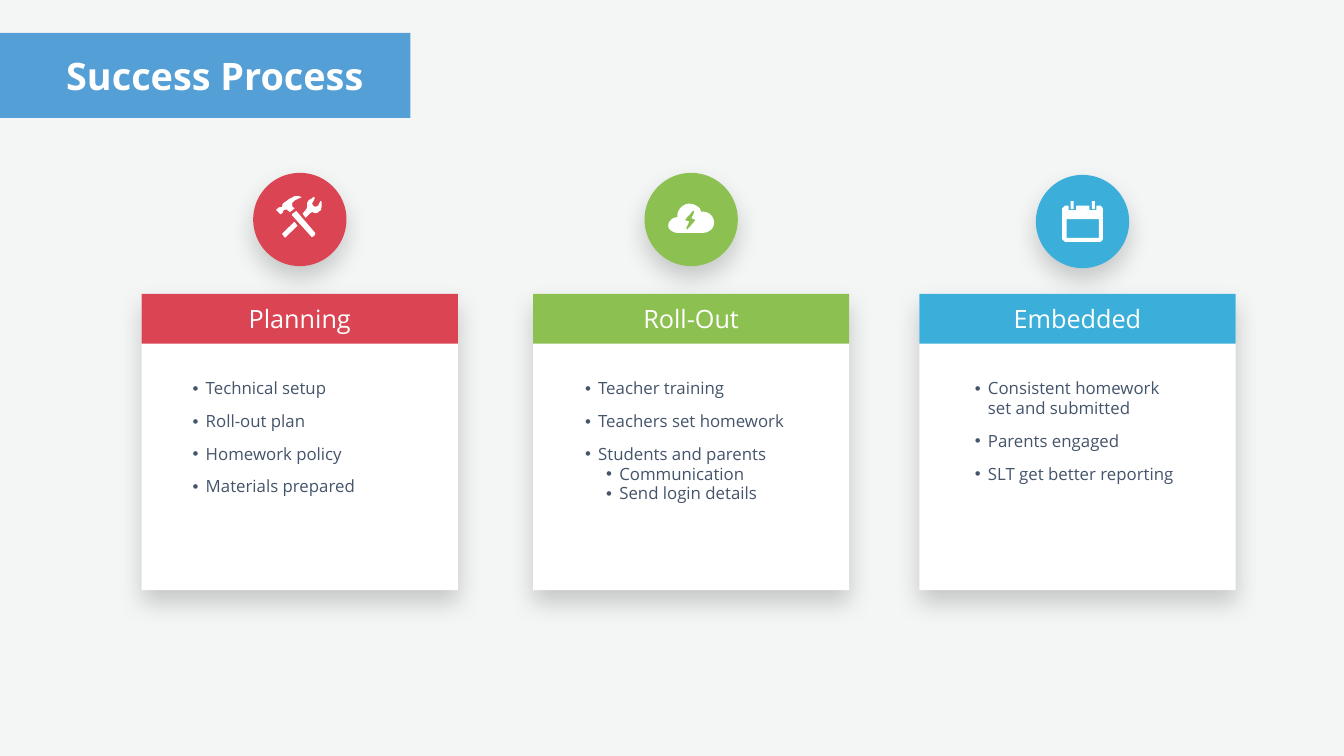
from lxml import etree
from pptx import Presentation, util as u
from pptx.dml.color import RGBColor
from pptx.enum import shapes, text
from pptx.oxml import ns

PX = 9144  # EMU per px, 100 px to the inch
FONT = "Open Sans"
WHITE, INK = "FFFFFF", "44546A"


def paint(fill, colour):
    fill.solid()
    fill.fore_color.rgb = RGBColor.from_string(colour)


def child(parent, tag, **attributes):
    return etree.SubElement(parent, ns.qn(tag), attributes)


# Icon outlines, relative to the corner of their circle.
# Two numbers are a line to a point, six are a Bezier curve.
HAMMER_AND_WRENCH = [
    [(61, 74), (64, 71, 67, 73, 72, 77), (74, 79, 74, 77, 74, 77),
     (75, 77, 80, 71, 82, 71), (82, 69), (80, 69, 78, 68, 78, 66),
     (70, 55, 101, 48, 96, 48), (93, 46, 83, 46, 82, 46),
     (77, 48, 69, 53, 66, 56), (61, 60, 59, 61, 59, 61),
     (57, 63, 59, 66, 56, 68), (53, 69, 51, 68, 49, 69),
     (49, 71, 48, 71, 46, 73), (46, 74), (53, 81),
     (53, 82, 54, 82, 56, 82), (56, 81, 57, 79, 59, 79),
     (59, 79, 59, 74, 61, 74)],
    [(86, 76), (85, 76), (78, 81), (77, 82, 77, 82, 77, 84), (115, 126),
     (115, 128, 117, 128, 119, 126), (123, 123), (123, 121, 123, 119, 123, 119)],
    [(136, 58), (135, 55, 135, 56, 133, 56), (133, 58, 130, 61, 130, 63),
     (128, 66, 125, 69, 120, 66), (115, 61, 117, 60, 119, 58),
     (119, 56, 122, 52, 122, 50), (123, 50, 122, 48, 120, 48),
     (119, 50, 109, 53, 107, 60), (106, 64, 109, 69, 104, 74), (98, 81),
     (104, 89), (112, 81), (114, 79, 117, 77, 120, 79),
     (128, 81, 131, 77, 135, 73), (136, 68, 136, 60, 136, 58)],
    [(59, 119), (57, 121, 57, 123, 59, 123), (62, 128),
     (64, 128, 66, 128, 66, 126), (88, 105), (82, 97)],
]
CLOUD = [
    [(117, 77), (112, 77), (109, 67, 101, 61, 89, 61), (77, 61, 65, 72, 65, 85),
     (65, 88), (64, 88), (56, 88, 47, 95, 47, 105), (47, 113, 56, 119, 64, 119),
     (117, 119), (128, 119, 138, 111, 138, 98), (138, 87, 128, 77, 117, 77)],
    [(99, 96), (96, 100, 88, 109, 86, 111), (86, 111, 85, 113, 83, 111),
     (83, 108), (88, 98), (88, 96, 86, 96, 85, 96), (83, 95, 81, 95, 81, 93),
     (81, 92, 81, 92, 83, 90), (85, 87, 94, 77, 94, 77),
     (96, 75, 96, 75, 98, 75), (98, 77, 99, 77, 99, 77),
     (99, 78, 98, 78, 98, 80), (93, 90), (94, 90, 96, 92, 98, 92),
     (99, 92, 101, 93, 101, 95)],
]
CALENDAR = [
    [(125, 61), (120, 61), (120, 70), (106, 70), (106, 61), (80, 61), (80, 70),
     (65, 70), (65, 61), (61, 61), (56, 61, 52, 65, 52, 70), (52, 125),
     (52, 129, 56, 133, 61, 133), (125, 133), (130, 133, 133, 129, 133, 125),
     (133, 70), (133, 65, 130, 61, 125, 61)],
    [(125, 125), (61, 125), (61, 88), (125, 88)],
    [(75, 52), (69, 52), (69, 68), (75, 68)],
    [(117, 52), (111, 52), (111, 68), (117, 68)],
]

# Heading, colour, card left, circle left and top, icon, list left and width, items
CARDS = [
    ("Planning", "DA4453", 281, 502, 343, HAMMER_AND_WRENCH, 370, 450,
     [("Technical setup", 0), ("Roll-out plan", 0), ("Homework policy", 0),
      ("Materials prepared", 0)]),
    ("Roll-Out", "8CC152", 1057, 1278, 343, CLOUD, 1148, 469,
     [("Teacher training", 0), ("Teachers set homework", 0),
      ("Students and parents", 0), ("Communication", 1), ("Send login details", 1)]),
    ("Embedded", "3BAFDA", 1823, 2054, 347, CALENDAR, 1921, 431,
     [("Consistent homework set and submitted", 0), ("Parents engaged", 0),
      ("SLT get better reporting", 0)]),
]
RECTANGLE, OVAL = shapes.MSO_SHAPE.RECTANGLE, shapes.MSO_SHAPE.OVAL

presentation = Presentation()
presentation.slide_width, presentation.slide_height = 2665 * PX, 1500 * PX
slide = presentation.slides.add_slide(presentation.slide_layouts[6])
paint(slide.background.fill, "F4F6F6")

# Plain blocks: title banner, then body, header and circle of each card
blocks = [(RECTANGLE, 0, 65, 814, 169, "0C79C8", False)]
for heading, colour, left, circle_left, circle_top, *rest in CARDS:
    blocks += [(OVAL, circle_left, circle_top, 185, 185, colour, True),
               (RECTANGLE, left, 583, 627, 588, WHITE, True),
               (RECTANGLE, left, 583, 627, 99, colour, False)]
for kind, left, top, width, height, colour, shadowed in blocks:
    shape = slide.shapes.add_shape(kind, left * PX, top * PX, width * PX, height * PX)
    paint(shape.fill, colour)
    shape.line.fill.background()
    shape.shadow.inherit = False
    if shadowed:
        effects = shape._element.spPr.find(ns.qn("a:effectLst"))
        shadow = child(effects, "a:outerShdw", blurRad=str(u.Pt(35)),
                       dist=str(u.Pt(16.8)), dir="5400000", algn="t", rotWithShape="0")
        child(child(shadow, "a:srgbClr", val="000000"), "a:alpha", val="19000")
    elif top == 65:
        tint = shape._element.spPr.find(".//" + ns.qn("a:srgbClr"))
        child(tint, "a:alpha", val="69000")

# White icons, all contours of one icon in a single outline
for heading, colour, left, circle_left, circle_top, icon, *rest in CARDS:
    builder = None
    for contour in icon:
        points = []
        for step in contour:
            if len(step) == 2:
                points.append(step)
                continue
            (x0, y0), (x1, y1, x2, y2, x3, y3) = points[-1], step
            for t in (0.2, 0.4, 0.6, 0.8, 1):
                a, b, c, d = (1 - t) ** 3, 3 * t * (1 - t) ** 2, 3 * t * t * (1 - t), t ** 3
                points.append((a * x0 + b * x1 + c * x2 + d * x3,
                               a * y0 + b * y1 + c * y2 + d * y3))
        points = [(circle_left + x, circle_top + y) for x, y in points]
        if builder is None:
            builder = slide.shapes.build_freeform(*points[0], scale=PX)
        else:
            builder.move_to(*points[0])
        builder.add_line_segments(points[1:], close=True)
    shape = builder.convert_to_shape()
    paint(shape.fill, WHITE)
    shape.line.fill.background()
    shape.shadow.inherit = False

# Text: title, then heading and bullet list of each card
texts = [(19, 93, 814, 113, 5, 54, True, WHITE, [("Success Process", None)])]
for heading, colour, left, circle_left, circle_top, icon, list_left, width, items in CARDS:
    texts += [(left, 602, 627, 68, 0, 36, False, WHITE, [(heading, None)]),
              (list_left, 740, width, 372, 12, 24, False, INK, items)]
for left, top, width, height, inset, size, bold, colour, items in texts:
    box = slide.shapes.add_textbox(left * PX, top * PX, width * PX, height * PX)
    frame = box.text_frame
    anchor = text.MSO_ANCHOR.MIDDLE if bold else text.MSO_ANCHOR.TOP
    frame_format = dict(word_wrap=True, vertical_anchor=anchor,
                        margin_left=inset * PX, margin_right=inset * PX,
                        margin_top=inset * PX, margin_bottom=inset * PX)
    for name, value in frame_format.items():
        setattr(frame, name, value)
    for index, (words, level) in enumerate(items):
        paragraph = frame.add_paragraph() if index else frame.paragraphs[0]
        run = paragraph.add_run()
        run.text = words
        for name, value in dict(name=FONT, size=u.Pt(size), bold=bold).items():
            setattr(run.font, name, value)
        run.font.color.rgb = RGBColor.from_string(colour)
        if level is None:
            paragraph.alignment = text.PP_ALIGN.CENTER
            continue
        properties = paragraph._p.get_or_add_pPr()
        properties.set("marL", str((26 + 42 * level) * PX))
        properties.set("indent", str(-26 * PX))
        child(child(properties, "a:buClr"), "a:srgbClr", val=INK)
        child(properties, "a:buFont", typeface="Arial")
        child(properties, "a:buChar", char="•")
        paragraph.level = level
        paragraph.line_spacing = 0.98
        if index and level == 0:
            paragraph.space_before = u.Pt(18.5)

presentation.save("out.pptx")
